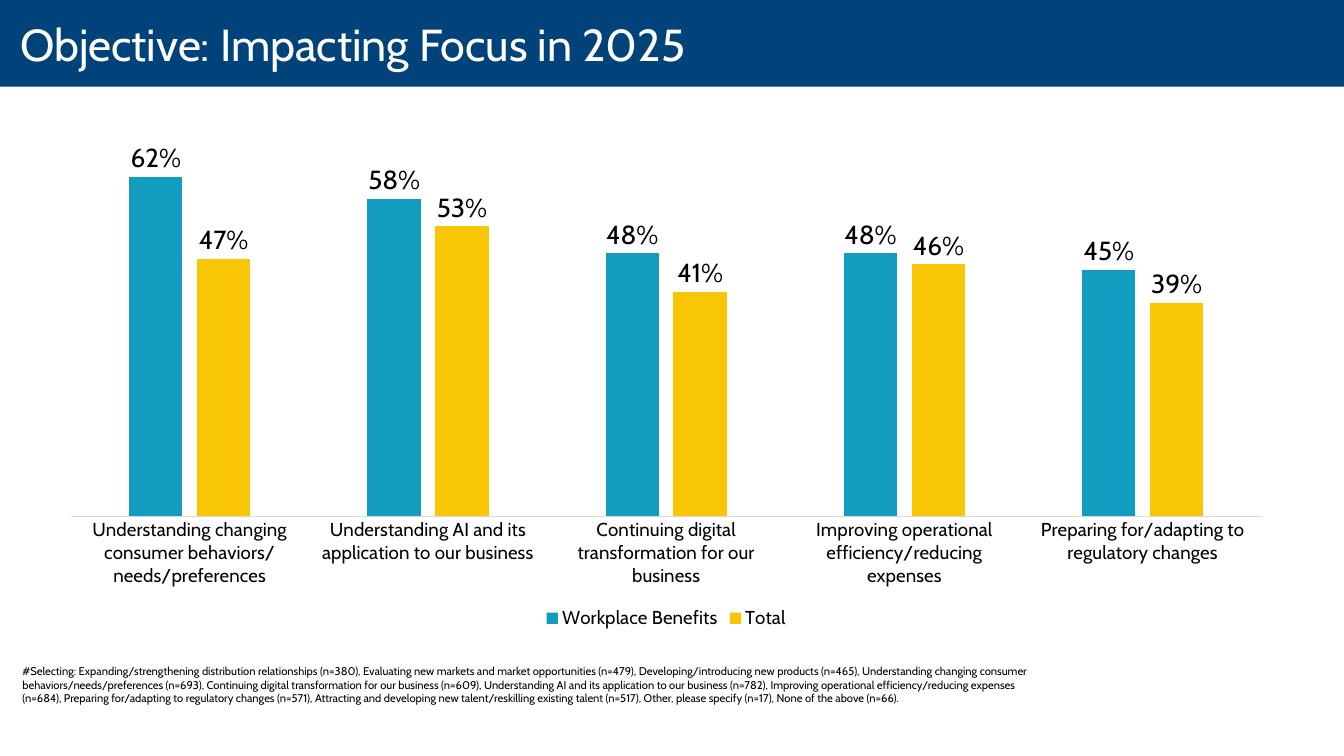
from dataclasses import dataclass

from pptx import Presentation
from pptx.chart.data import CategoryChartData
from pptx.dml.color import RGBColor
from pptx.enum import chart as ch, shapes, text
from pptx.util import Cm, Pt


@dataclass(frozen=True)
class Theme:
    font: str = "Cabin"
    navy: str = "00437B"
    teal: str = "129DC0"
    gold: str = "F9C606"
    rule: str = "D9D9D9"
    ink: str = "000000"
    paper: str = "FFFFFF"
    title: int = 48
    label: int = 28
    body: int = 20
    note: int = 12


THEME = Theme()
WIDTH, HEIGHT = 50.8, 28.58

TITLE = "Objective: Impacting Focus in 2025"
NOTE = (
    "#Selecting: Expanding/strengthening distribution relationships (n=380), "
    "Evaluating new markets and market opportunities (n=479), "
    "Developing/introducing new products (n=465), "
    "Understanding changing consumer behaviors/needs/preferences (n=693), "
    "Continuing digital transformation for our business (n=609), "
    "Understanding AI and its application to our business (n=782), "
    "Improving operational efficiency/reducing expenses (n=684), "
    "Preparing for/adapting to regulatory changes (n=571), "
    "Attracting and developing new talent/reskilling existing talent (n=517), "
    "Other, please specify (n=17), None of the above (n=66)."
)
GOALS = [
    "Understanding changing consumer behaviors/needs/preferences",
    "Understanding AI and its application to our business",
    "Continuing digital transformation for our business",
    "Improving operational efficiency/reducing expenses",
    "Preparing for/adapting to regulatory changes",
]
SERIES = [
    ("Workplace Benefits", (0.62, 0.58, 0.48, 0.48, 0.45), THEME.teal),
    ("Total", (0.47, 0.53, 0.41, 0.46, 0.39), THEME.gold),
]


def style(font, size, color=THEME.ink):
    font.name = THEME.font
    font.size = Pt(size)
    font.bold = False
    font.color.rgb = RGBColor.from_string(color)


def paint(fill, color):
    fill.solid()
    fill.fore_color.rgb = RGBColor.from_string(color)


def add_text(slide, box, words, size, color):
    frame = slide.shapes.add_textbox(*map(Cm, box)).text_frame
    frame.word_wrap = True
    run = frame.paragraphs[0].add_run()
    run.text = words
    style(run.font, size, color)
    return frame


def add_header(slide, box):
    """Place the title, centred in height, on a full-width band."""
    band = slide.shapes.add_shape(shapes.MSO_SHAPE.RECTANGLE, *map(Cm, box))
    band.shadow.inherit = False
    paint(band.fill, THEME.navy)
    band.line.fill.background()
    frame = add_text(slide, box, TITLE, THEME.title, THEME.paper)
    frame.word_wrap = False
    frame.vertical_anchor = text.MSO_ANCHOR.MIDDLE
    frame.margin_left, frame.margin_right = Cm(0.76), Cm(0.5)
    frame.margin_top = frame.margin_bottom = 0


def add_bars(slide, box):
    data = CategoryChartData(number_format="0%")
    data.categories = GOALS
    for name, shares, _ in SERIES:
        data.add_series(name, shares)
    kind = ch.XL_CHART_TYPE.COLUMN_CLUSTERED
    chart = slide.shapes.add_chart(kind, *map(Cm, box), data).chart
    chart.has_title = False
    style(chart.font, THEME.body)

    goals = chart.category_axis
    goals.major_tick_mark = ch.XL_TICK_MARK.NONE
    goals.format.line.width = Pt(0.75)
    goals.format.line.color.rgb = RGBColor.from_string(THEME.rule)
    style(goals.tick_labels.font, THEME.body)
    shares = chart.value_axis
    shares.visible = False
    shares.has_major_gridlines = False
    shares.minimum_scale, shares.maximum_scale = 0, 0.7

    chart.has_legend = True
    chart.legend.position = ch.XL_LEGEND_POSITION.BOTTOM
    chart.legend.include_in_layout = False
    style(chart.legend.font, THEME.body)

    plot = chart.plots[0]
    plot.vary_by_categories = False
    plot.gap_width, plot.overlap = 219, -27
    for bars, (_, _, color) in zip(plot.series, SERIES):
        paint(bars.format.fill, color)
        bars.invert_if_negative = False
        labels = bars.data_labels
        labels.show_value = True
        labels.position = ch.XL_LABEL_POSITION.OUTSIDE_END
        labels.number_format = "0%"
        labels.number_format_is_linked = False
        style(labels.font, THEME.label)


def main():
    deck = Presentation()
    deck.slide_width, deck.slide_height = Cm(WIDTH), Cm(HEIGHT)
    slide = deck.slides.add_slide(deck.slide_layouts[6])
    paint(slide.background.fill, THEME.paper)
    add_header(slide, (0, 0, WIDTH, 3.28))
    add_bars(slide, (1.73, 4.65, 46.9, 19.3))
    add_text(slide, (0.6, 25, 38.55, 2.3), NOTE, THEME.note, THEME.ink)
    deck.save("out.pptx")


if __name__ == "__main__":
    main()
